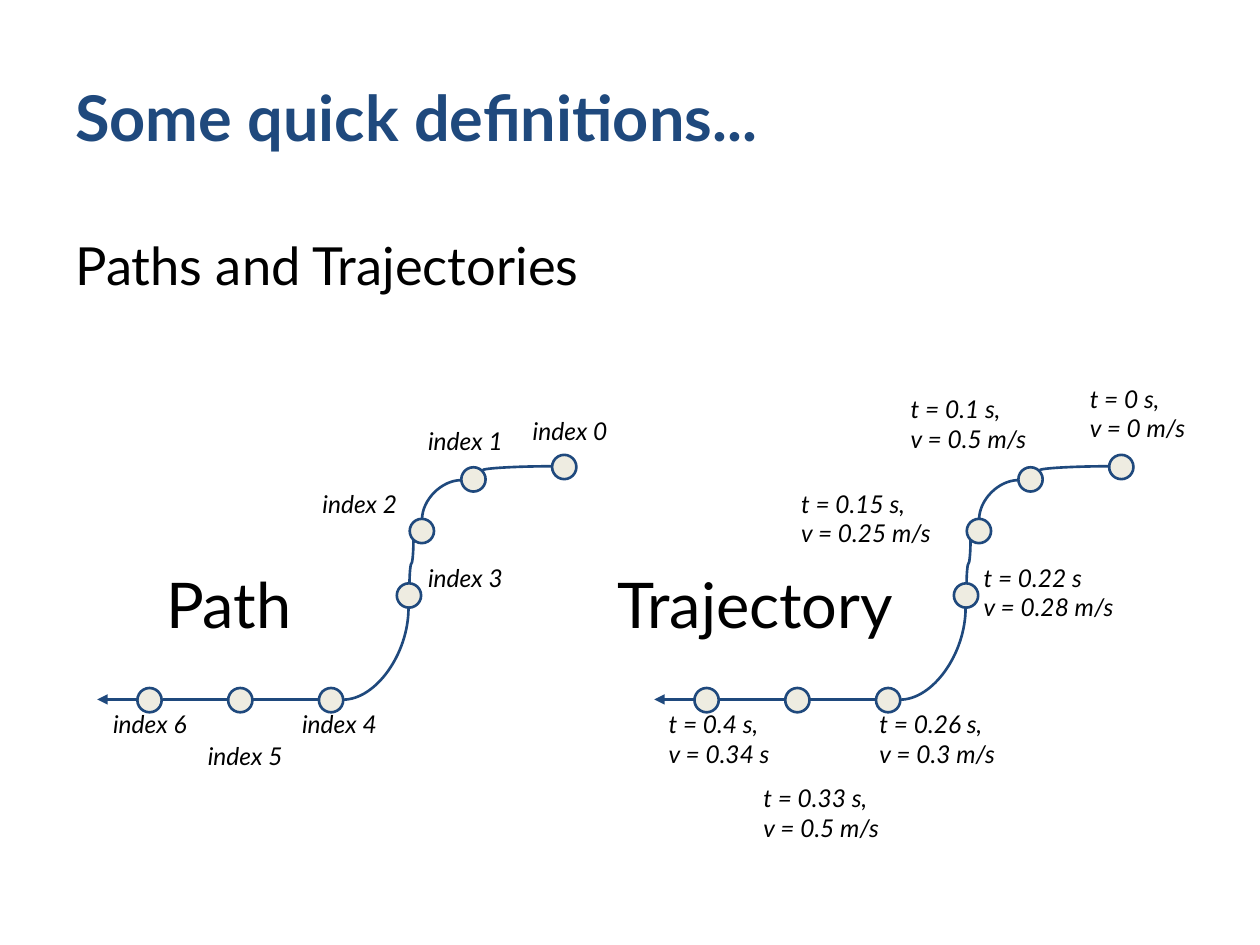
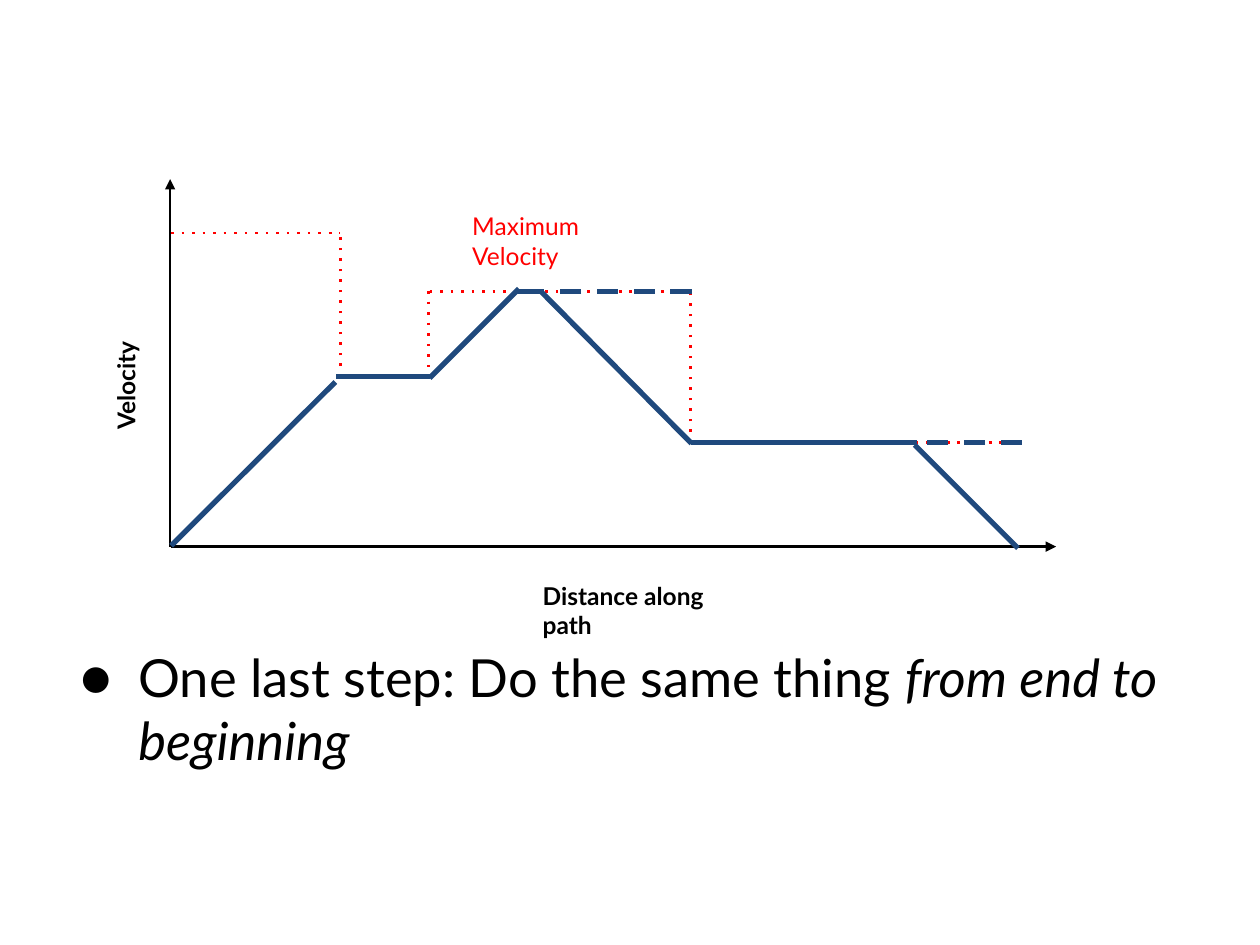
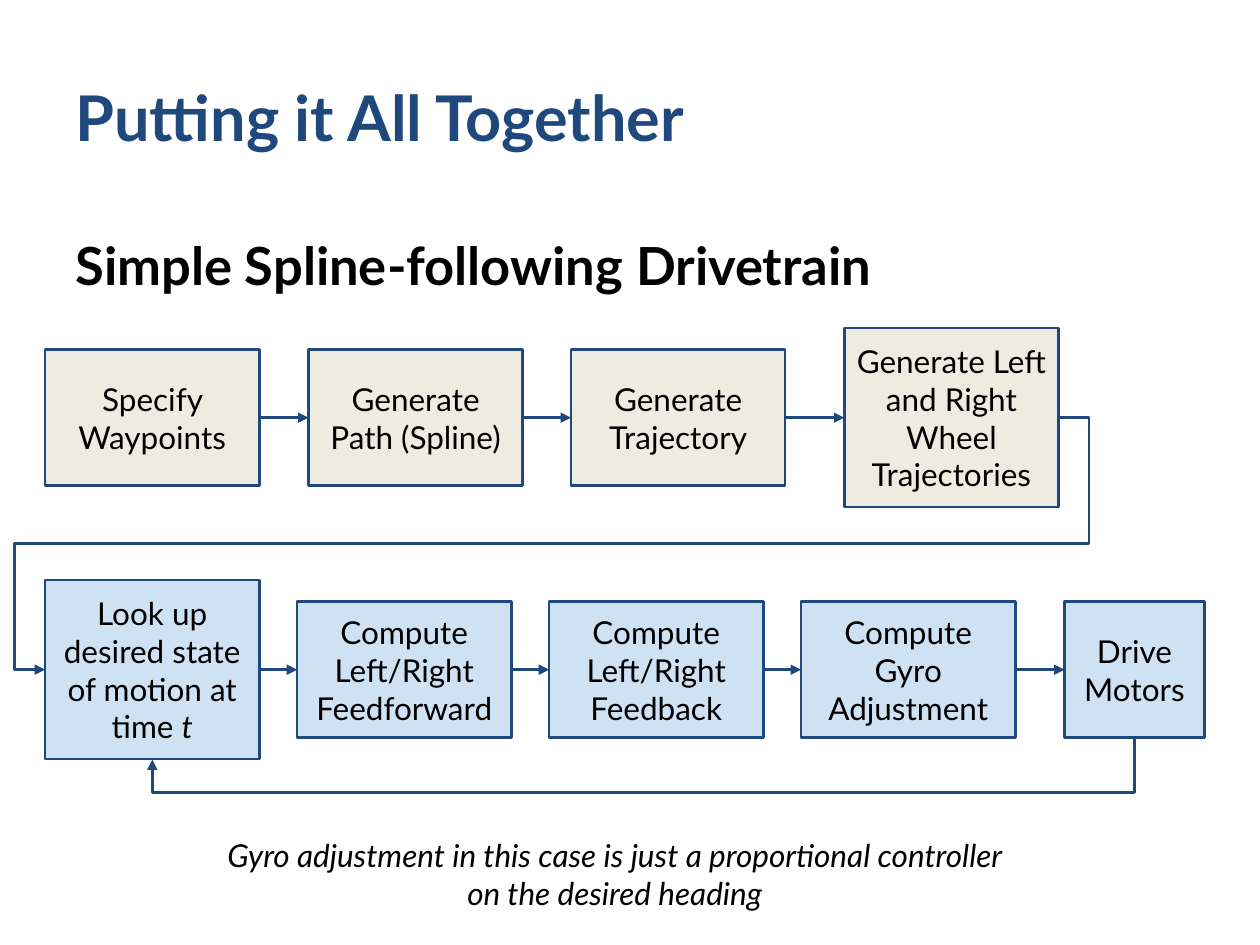
from dataclasses import dataclass

from lxml.etree import SubElement
from pptx import Presentation
from pptx.dml.color import RGBColor
from pptx.enum.shapes import MSO_CONNECTOR as Link, MSO_SHAPE as Preset
from pptx.enum.text import MSO_ANCHOR as Anchor, MSO_AUTO_SIZE as AutoSize, PP_ALIGN as Align
from pptx.oxml.ns import qn
from pptx.util import Cm, Pt


@dataclass(frozen=True)
class Theme:
    """Colours, font and sizes shared by the slides."""
    navy: RGBColor = RGBColor(0x1F, 0x49, 0x7D)
    cream: RGBColor = RGBColor(0xEE, 0xEC, 0xE1)
    sky: RGBColor = RGBColor(0xCF, 0xE2, 0xF3)
    red: RGBColor = RGBColor(0xFF, 0, 0)
    black: RGBColor = RGBColor(0, 0, 0)
    font: str = "Lato"
    title: int = 36
    body: int = 30
    step: int = 18
    label: int = 14
    thin: float = 1.5
    thick: float = 3
    inset: float = 0.25


THEME = Theme()

DOT_SIZE = 0.49
TRAJECTORY_SHIFT = 11.23
WAYPOINTS = [(11.13, 9.17), (9.3, 9.42), (8.26, 10.46), (8, 11.76),
             (6.43, 13.87), (4.6, 13.87), (2.77, 13.87)]
CURVES = [
    ("curvedConnector2", (8.51, 9.68, 0.79, 0.79), 0, True, ()),
    ("curvedConnector3", (7.85, 11.28, 0.89, 0.08), 90, False, (0.54,)),
    ("curvedConnector2", (6.65, 12.52, 1.85, 1.32), 90, False, ()),
    ("curvedConnector3", (5.11, 14.1, 1.34, 0), 0, True, (0.5,)),
    ("curvedConnector3", (3.28, 14.1, 1.34, 0), 0, True, (0.5,)),
    ("curvedConnector2", (9.73, 9.4, 1.4, 0.08), 0, True, ()),
]
INDEX_PLACES = [(10.49, 8.13), (8.38, 8.33), (6.25, 9.6), (8.38, 11.1),
                (5.84, 14.05), (3.94, 14.68), (2.03, 14.05)]
STATES = [
    ("t = 0 s,\vv = 0 m/s", 21.72, 7.49, 3.12),
    ("t = 0.1 s,\nv = 0.5 m/s", 18.11, 7.7, 3.12),
    ("t = 0.15 s,\nv = 0.25 m/s", 15.9, 9.6, 4.06),
    ("t = 0.22 s\nv = 0.28 m/s", 19.58, 11.1, 4.55),
    ("t = 0.26 s,\nv = 0.3 m/s", 17.48, 14.05, 3.12),
    ("t = 0.33 s,\nv = 0.5 m/s", 15.14, 15.54, 3.12),
    ("t = 0.4 s,\nv = 0.34 s", 13.23, 14.05, 3.12),
]

AXES = [(3.43, 11.02, 3.43, 3.61), (3.45, 11.02, 21.29, 11.02)]
LIMITS = [(3.45, 4.7, 6.86, 4.7), (6.86, 7.59, 6.86, 4.72), (6.93, 7.57, 8.64, 7.57),
          (8.64, 5.87, 8.64, 7.57), (8.66, 5.87, 13.84, 5.87),
          (13.92, 8.92, 13.92, 5.92), (14, 8.92, 20.37, 8.92)]
PROFILE = [(3.45, 11, 6.76, 7.7), (8.66, 7.59, 6.78, 7.59), (8.66, 7.62, 10.46, 5.82),
           (18.49, 8.92, 13.92, 8.92), (18.44, 8.97, 20.52, 11.05),
           (10.92, 5.89, 13.94, 8.94), (10.39, 5.87, 10.87, 5.87)]
FORWARD_PASS = [(13.94, 5.87, 10.46, 5.87), (20.6, 8.92, 18.49, 8.92)]

STEP_WIDTH, STEP_HEIGHT, TALL_HEIGHT = 4.32, 2.74, 3.61
PLANNING_Y, CONTROL_Y = 8.42, 13.5
PLANNING = [
    ("Specify Waypoints", 0.91, STEP_WIDTH, STEP_HEIGHT),
    ("Generate Path (Spline)", 6.22, STEP_WIDTH, STEP_HEIGHT),
    ("Generate Trajectory", 11.51, STEP_WIDTH, STEP_HEIGHT),
    ("Generate Left and Right Wheel Trajectories", 17.02, STEP_WIDTH, TALL_HEIGHT),
]
CONTROL = [
    ("Look up desired state of motion at time ", 0.91, STEP_WIDTH, TALL_HEIGHT),
    ("Compute Left/Right Feedforward", 5.99, STEP_WIDTH, STEP_HEIGHT),
    ("Compute Left/Right Feedback", 11.07, STEP_WIDTH, STEP_HEIGHT),
    ("Compute Gyro Adjustment", 16.15, STEP_WIDTH, STEP_HEIGHT),
    ("Drive Motors", 21.46, 2.82, STEP_HEIGHT),
]


def style_text(frame, size, color=THEME.black, bold=False, italic=False, align=None):
    """Format every run of a text frame and set its insets."""
    frame.word_wrap = True
    frame.auto_size = AutoSize.NONE
    frame.margin_left = frame.margin_right = Cm(THEME.inset)
    frame.margin_top = frame.margin_bottom = Cm(THEME.inset)
    for paragraph in frame.paragraphs:
        paragraph.space_before = Pt(0)
        if align is not None:
            paragraph.alignment = align
        for run in paragraph.runs:
            run.font.name = THEME.font
            run.font.size = Pt(size)
            run.font.color.rgb = color
            run.font.bold = bold
            if italic:
                run.font.italic = True


def add_emphasis(paragraph, words):
    """Append italic words to a paragraph."""
    run = paragraph.add_run()
    run.text = words
    run.font.italic = True


def place(holder, left, top, width, height):
    """Move and size a placeholder."""
    holder.left, holder.top = Cm(left), Cm(top)
    holder.width, holder.height = Cm(width), Cm(height)


def set_title(slide, words):
    """Fill the title placeholder."""
    title = slide.shapes.title
    place(title, 1.27, 0.76, 22.86, 3.18)
    title.text_frame.text = words
    title.text_frame.vertical_anchor = Anchor.MIDDLE
    style_text(title.text_frame, THEME.title, THEME.navy, bold=True, align=Align.LEFT)


def set_body(slide, words, box, bold=False, bullet=None, emphasis=None):
    """Fill the body placeholder with one paragraph."""
    body = slide.placeholders[1]
    place(body, *box)
    body.text_frame.text = words
    paragraph = body.text_frame.paragraphs[0]
    properties = paragraph._p.get_or_add_pPr()
    properties.set("marL", str(Cm(1.27) if bullet else 0))
    properties.set("indent", str(Cm(-1.17) if bullet else 0))
    if bullet:
        bullet_color = SubElement(properties, qn("a:buClr"))
        SubElement(bullet_color, qn("a:srgbClr"), val=str(THEME.black))
        SubElement(properties, qn("a:buFont"), typeface=THEME.font)
        SubElement(properties, qn("a:buChar"), char=bullet)
    else:
        SubElement(properties, qn("a:buNone"))
    if emphasis:
        add_emphasis(paragraph, emphasis)
    style_text(body.text_frame, THEME.body, bold=bold)


def add_label(slide, words, left, top, width, height, size=THEME.label, rotation=0, **style):
    """Add a text box."""
    label = slide.shapes.add_textbox(Cm(left), Cm(top), Cm(width), Cm(height))
    label.rotation = rotation
    label.text_frame.text = words
    style_text(label.text_frame, size, **style)


def add_box(slide, preset, left, top, width, height, fill):
    """Add a filled shape with a navy outline."""
    box = slide.shapes.add_shape(preset, Cm(left), Cm(top), Cm(width), Cm(height))
    box.shadow.inherit = False
    box.fill.solid()
    box.fill.fore_color.rgb = fill
    box.line.color.rgb = THEME.navy
    box.line.width = Pt(THEME.thin)
    return box


def add_line(slide, x1, y1, x2, y2, color=THEME.navy, width=THEME.thin,
             dash=None, arrow=False, kind=Link.STRAIGHT):
    """Add a connector, dashed or with an arrowhead if asked."""
    line = slide.shapes.add_connector(kind, Cm(x1), Cm(y1), Cm(x2), Cm(y2))
    line.line.color.rgb = color
    line.line.width = Pt(width)
    properties = line._element.spPr
    stroke = properties.find(qn("a:ln"))
    if dash:
        SubElement(stroke, qn("a:prstDash"), val=dash)
    if arrow:
        SubElement(stroke, qn("a:tailEnd"), type="triangle")
    SubElement(properties, qn("a:effectLst"))
    return line


def add_route(slide, preset, box, turn, flip, bends, arrow=False):
    """Add a curved or bent connector in a frame turned by some degrees."""
    left, top, width, height = box
    start, end = (left + width, left) if flip else (left, left + width)
    kind = Link.CURVE if preset.startswith("curved") else Link.ELBOW
    route = add_line(slide, start, top, end, top + height, arrow=arrow, kind=kind)
    properties = route._element.spPr
    if turn:
        properties.find(qn("a:xfrm")).set("rot", str(turn * 60000))
    geometry = properties.find(qn("a:prstGeom"))
    geometry.set("prst", preset)
    guides = geometry.find(qn("a:avLst"))
    for number, bend in enumerate(bends, 1):
        SubElement(guides, qn("a:gd"), name=f"adj{number}", fmla=f"val {round(bend * 100000)}")


def add_track(slide, shift):
    """Draw the waypoints and the curve through them."""
    for left, top in WAYPOINTS:
        add_box(slide, Preset.OVAL, left + shift, top, DOT_SIZE, DOT_SIZE, THEME.cream)
    for preset, (left, top, width, height), turn, flip, bends in CURVES:
        add_route(slide, preset, (left + shift, top, width, height), turn, flip, bends)
    add_line(slide, 2.77 + shift, 14.1, 1.96 + shift, 14.1, arrow=True)


def add_steps(slide, steps, middle, fill, variable=None):
    """Draw a row of steps joined by arrows."""
    previous = None
    for words, left, width, height in steps:
        step = add_box(slide, Preset.RECTANGLE, left, middle - height / 2, width, height, fill)
        step.text_frame.text = words
        if variable and previous is None:
            add_emphasis(step.text_frame.paragraphs[0], variable)
        step.text_frame.vertical_anchor = Anchor.MIDDLE
        style_text(step.text_frame, THEME.step, align=Align.CENTER)
        if previous is not None:
            arrow = add_line(slide, left - 0.4, middle, left, middle, arrow=True)
            arrow.begin_connect(previous, 3)
            arrow.end_connect(step, 1)
        previous = step


def definitions_slide(slide):
    """Compare a path with a trajectory."""
    set_title(slide, "Some quick definitions...")
    set_body(slide, "Paths and Trajectories", (1.27, 4.45, 22.86, 2.74))
    for shift in (0, TRAJECTORY_SHIFT):
        add_track(slide, shift)
    add_label(slide, "Path", 3.1, 11.15, 4.06, 0.89, THEME.title)
    add_label(slide, "Trajectory", 12.19, 11.15, 6.65, 0.89, THEME.title)
    for number, (left, top) in enumerate(INDEX_PLACES):
        add_label(slide, f"index {number}", left, top, 3.12, 2.29, italic=True)
    for words, left, top, width in STATES:
        add_label(slide, words, left, top, width, 2.29, italic=True)


def velocity_slide(slide):
    """Sketch the velocity profile after the backward pass."""
    title = slide.shapes.title._element
    title.getparent().remove(title)
    for axis in AXES:
        add_line(slide, *axis, color=THEME.black, arrow=True)
    add_label(slide, "Velocity", 0.84, 6.22, 3.84, 1.55, rotation=270, bold=True)
    add_label(slide, "Distance along path", 10.69, 11.46, 3.84, 1.55, bold=True)
    for limit in LIMITS:
        add_line(slide, *limit, color=THEME.red, dash="dot")
    add_label(slide, "Maximum Velocity", 9.27, 4.01, 4.39, 1.7, color=THEME.red)
    set_body(slide, "One last step: Do the same thing ", (1.27, 12.75, 23.57, 6.12),
             bullet="●", emphasis="from end to beginning")
    for segment in PROFILE:
        add_line(slide, *segment, width=THEME.thick)
    for segment in FORWARD_PASS:
        add_line(slide, *segment, width=THEME.thick, dash="dash")


def drivetrain_slide(slide):
    """Chain the planning steps and the control loop."""
    set_title(slide, "Putting it All Together")
    set_body(slide, "Simple Spline-following Drivetrain", (1.27, 4.45, 22.86, 2.29), bold=True)
    add_steps(slide, PLANNING, PLANNING_Y, THEME.cream)
    add_steps(slide, CONTROL, CONTROL_Y, THEME.sky, variable="t")
    add_route(slide, "bentConnector5", (0.91, PLANNING_Y, 20.43, CONTROL_Y - PLANNING_Y),
              0, True, (-0.03, 0.5, 1.03), arrow=True)
    add_route(slide, "bentConnector3", (12.75, 5.19, 0.44, 19.8), 90, False, (2.53,), arrow=True)
    add_label(slide, "Gyro adjustment in this case is just a proportional controller "
              "on the desired heading", 4.32, 16.61, 16.15, 1.73, THEME.step,
              italic=True, align=Align.CENTER)


def main():
    """Build and save the presentation."""
    deck = Presentation()
    deck.slide_width, deck.slide_height = Cm(25.4), Cm(19.05)
    for build in (definitions_slide, velocity_slide, drivetrain_slide):
        build(deck.slides.add_slide(deck.slide_layouts[1]))
    deck.save("out.pptx")


if __name__ == "__main__":
    main()
